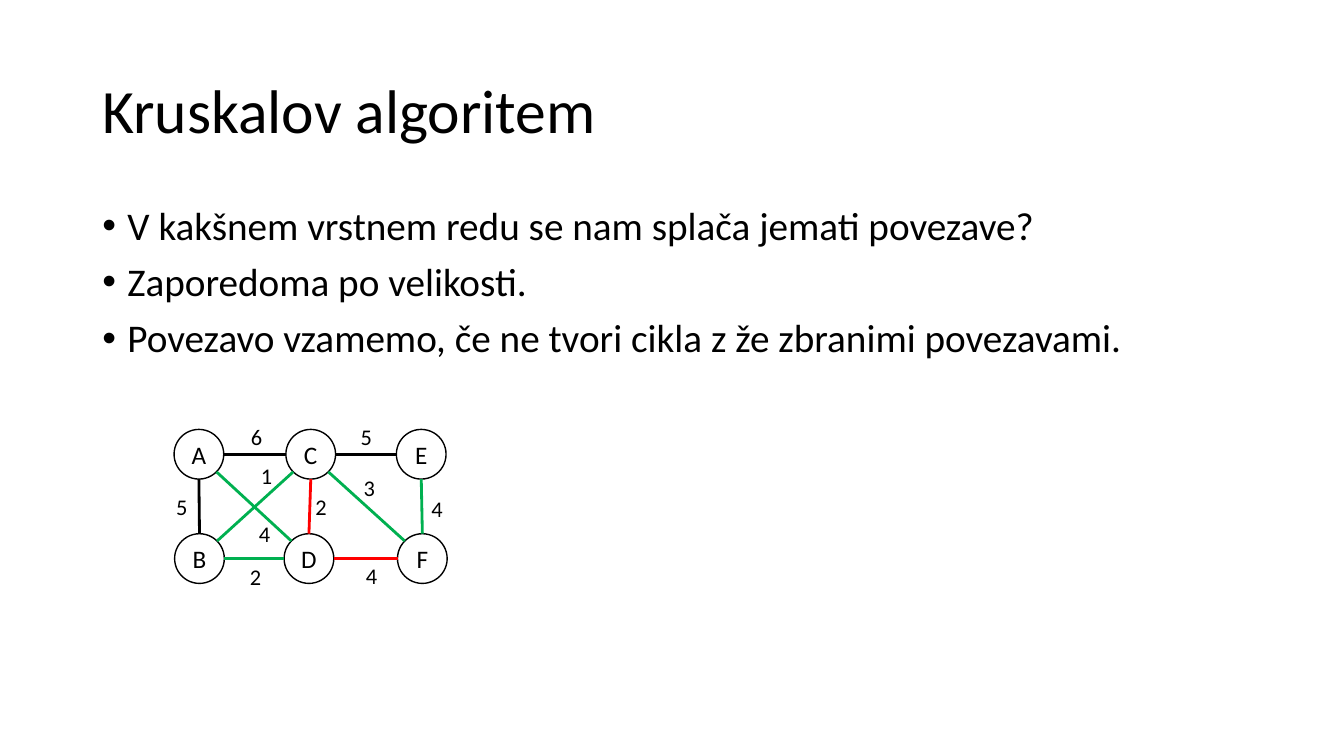
from dataclasses import dataclass
from math import hypot

from lxml.etree import SubElement
from pptx import Presentation
from pptx.dml.color import RGBColor
from pptx.enum.shapes import MSO_CONNECTOR, MSO_SHAPE
from pptx.enum.text import MSO_ANCHOR, PP_ALIGN
from pptx.oxml.ns import qn
from pptx.util import Pt


@dataclass(frozen=True)
class Theme:
    font: str = "Calibri"
    title_size: int = 44
    body_size: int = 28
    node_size: int = 18
    weight_size: int = 16
    ink: RGBColor = RGBColor(0, 0, 0)
    taken: RGBColor = RGBColor(0x00, 0xB0, 0x50)
    rejected: RGBColor = RGBColor(0xFF, 0, 0)


theme = Theme()


def write(paragraph, wording, size):
    paragraph.text = wording
    paragraph.font.name = theme.font
    paragraph.font.size = Pt(size)
    paragraph.font.color.rgb = theme.ink


deck = Presentation()
deck.slide_width = Pt(960)
deck.slide_height = Pt(540)
slide = deck.slides.add_slide(deck.slide_layouts[6])
shapes = slide.shapes

# Title and bullets
title = shapes.add_textbox(Pt(66), Pt(28.75), Pt(828), Pt(104.4)).text_frame
title.word_wrap = True
title.vertical_anchor = MSO_ANCHOR.MIDDLE
write(title.paragraphs[0], "Kruskalov algoritem", theme.title_size)
title.paragraphs[0].line_spacing = 0.9

rules = [
    "V kakšnem vrstnem redu se nam splača jemati povezave?",
    "Zaporedoma po velikosti.",
    "Povezavo vzamemo, če ne tvori cikla z že zbranimi povezavami.",
]
body = shapes.add_textbox(Pt(66), Pt(143.75), Pt(808), Pt(127.4)).text_frame
body.word_wrap = True
for number, rule in enumerate(rules):
    bullet = body.add_paragraph() if number else body.paragraphs[0]
    write(bullet, rule, theme.body_size)
    bullet.line_spacing = 0.9
    bullet.space_before = Pt(10)
    properties = bullet._p.get_or_add_pPr()
    properties.set("marL", str(Pt(18)))
    properties.set("indent", str(Pt(-18)))
    SubElement(properties, qn("a:buFont"), typeface="Arial")
    SubElement(properties, qn("a:buChar"), char="•")

# Graph nodes: column, row and centre
radius = 17.75
nodes = {
    "A": (0, 0, 142.1, 324.5),
    "C": (1, 0, 222, 324.5),
    "E": (2, 0, 300.9, 324.5),
    "B": (0, 1, 142.5, 399),
    "D": (1, 1, 220.7, 399),
    "F": (2, 1, 301.7, 399),
}
for letter, (_, _, x, y) in nodes.items():
    node = shapes.add_shape(MSO_SHAPE.OVAL, Pt(x - radius), Pt(y - radius),
                            Pt(2 * radius), Pt(2 * radius))
    node.shadow.inherit = False
    node.fill.background()
    node.line.color.rgb = theme.ink
    node.line.width = Pt(1)
    frame = node.text_frame
    frame.word_wrap = False
    frame.vertical_anchor = MSO_ANCHOR.MIDDLE
    frame.margin_left = frame.margin_right = 0
    write(frame.paragraphs[0], letter, theme.node_size)
    frame.paragraphs[0].alignment = PP_ALIGN.CENTER

# Edges: ends, colour, weight, left and top of the weight
edges = [
    ("A", "B", theme.ink, "5", 118.8, 348.5),
    ("A", "C", theme.ink, "6", 172.1, 298.8),
    ("C", "E", theme.ink, "5", 250.6, 298.8),
    ("C", "B", theme.taken, "1", 179.3, 326.9),
    ("D", "B", theme.taken, "2", 171.4, 398.9),
    ("C", "D", theme.rejected, "2", 218.2, 348.5),
    ("F", "C", theme.taken, "3", 252.7, 334.8),
    ("A", "D", theme.taken, "4", 177.8, 367.9),
    ("F", "D", theme.rejected, "4", 254.2, 398.2),
    ("E", "F", theme.taken, "4", 301, 349.9),
]
for start, end, color, weight, left, top in edges:
    start_column, start_row, x1, y1 = nodes[start]
    end_column, end_row, x2, y2 = nodes[end]
    across, down = end_column - start_column, end_row - start_row
    reach = radius / hypot(across, down)
    edge = shapes.add_connector(
        MSO_CONNECTOR.STRAIGHT,
        Pt(x1 + across * reach), Pt(y1 + down * reach),
        Pt(x2 - across * reach), Pt(y2 - down * reach))
    edge.line.color.rgb = color
    edge.line.width = Pt(2)
    SubElement(edge._element.spPr, qn("a:effectLst"))

    label = shapes.add_textbox(Pt(left), Pt(top), Pt(14.4), Pt(26.6)).text_frame
    label.word_wrap = False
    label.margin_right = 0
    write(label.paragraphs[0], weight, theme.weight_size)

deck.save("out.pptx")
